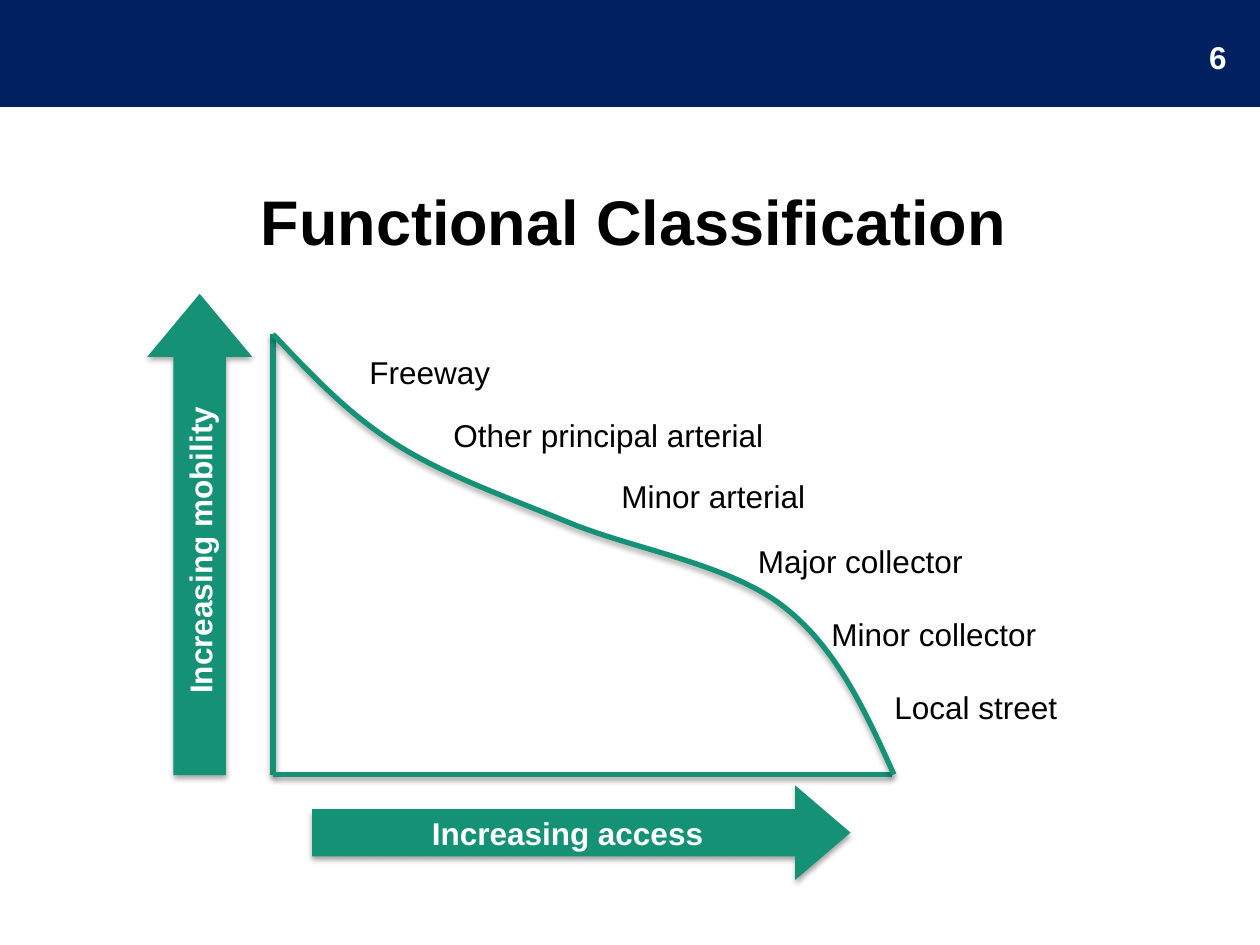
from dataclasses import dataclass

import lxml.etree
import pptx
import pptx.dml.color
import pptx.enum.shapes
import pptx.enum.text
import pptx.oxml
import pptx.oxml.ns
import pptx.util

Pt = pptx.util.Pt
RGB = pptx.dml.color.RGBColor.from_string
Shape = pptx.enum.shapes.MSO_SHAPE
Align = pptx.enum.text.PP_ALIGN
Anchor = pptx.enum.text.MSO_ANCHOR
qn = pptx.oxml.ns.qn


@dataclass(frozen=True)
class Theme:
    font: str = "Arial"
    navy: str = "002060"
    green: str = "159175"
    black: str = "000000"
    white: str = "FFFFFF"
    title_size: int = 36
    body_size: int = 18
    header_line: int = 2
    graph_line: int = 3


class SlideBuilder:
    def __init__(self, theme, slide):
        self.theme = theme
        self.slide = slide
        self.shapes = slide.shapes

    def start_group(self):
        self.shapes = self.slide.shapes.add_group_shape().shapes

    def end_group(self):
        self.shapes = self.slide.shapes

    def set_text(self, frame, text, color, size, bold=False, align=Align.LEFT):
        frame.word_wrap = True
        paragraph = frame.paragraphs[0]
        paragraph.text = text
        paragraph.alignment = align
        font = paragraph.font
        font.name = self.theme.font
        font.size = Pt(size)
        font.bold = bold
        font.color.rgb = RGB(color)

    def add_shadow(self, shape):
        properties = shape._element.spPr
        effects = properties.find(qn("a:effectLst"))
        if effects is None:
            effects = lxml.etree.SubElement(properties, qn("a:effectLst"))
        effects.append(pptx.oxml.parse_xml(
            f'<a:outerShdw {pptx.oxml.ns.nsdecls("a")} blurRad="{Pt(3.1)}" '
            f'dist="{Pt(1.8)}" dir="5400000" rotWithShape="0">'
            f'<a:srgbClr val="{self.theme.black}"><a:alpha val="35000"/></a:srgbClr>'
            '</a:outerShdw>'))

    def stroke(self, line):
        line.color.rgb = RGB(self.theme.green)
        line.width = Pt(self.theme.graph_line)

    def header(self, width, height):
        band = self.shapes.add_shape(Shape.RECTANGLE, 0, 0, Pt(width), Pt(height))
        band.shadow.inherit = False
        band.fill.solid()
        band.fill.fore_color.rgb = RGB(self.theme.navy)
        band.line.color.rgb = RGB(self.theme.navy)
        band.line.width = Pt(self.theme.header_line)

    def title(self, text, left, top, width, height):
        title = self.slide.shapes.title
        title.left, title.top, title.width, title.height = map(Pt, (left, top, width, height))
        title.text_frame.vertical_anchor = Anchor.MIDDLE
        self.set_text(title.text_frame, text, self.theme.black,
                      self.theme.title_size, True, Align.CENTER)

    def axis(self, start, end):
        axis = self.shapes.add_connector(
            pptx.enum.shapes.MSO_CONNECTOR.STRAIGHT, *map(Pt, start + end))
        self.stroke(axis.line)
        self.add_shadow(axis)

    def curve(self, start, controls):
        builder = self.shapes.build_freeform(Pt(start[0]), Pt(start[1]))
        builder.add_line_segments([(Pt(x), Pt(y)) for x, y in controls], close=False)
        curve = builder.convert_to_shape()
        outline = curve._element.find(".//" + qn("a:path"))
        segments = outline.findall(qn("a:lnTo"))
        for first in range(0, len(segments), 3):
            bezier = lxml.etree.SubElement(outline, qn("a:cubicBezTo"))
            for segment in segments[first:first + 3]:
                bezier.append(segment[0])
                outline.remove(segment)
        curve.shadow.inherit = False
        curve.fill.background()
        self.stroke(curve.line)
        self.add_shadow(curve)

    def arrow(self, text, left, top, width, height, head, rotation=0):
        arrow = self.shapes.add_shape(
            Shape.RIGHT_ARROW, *map(Pt, (left, top, width, height)))
        arrow.rotation = rotation
        arrow.adjustments[1] = head
        arrow.shadow.inherit = False
        arrow.fill.solid()
        arrow.fill.fore_color.rgb = RGB(self.theme.green)
        arrow.line.fill.background()
        self.add_shadow(arrow)
        arrow.text_frame.vertical_anchor = Anchor.MIDDLE
        self.set_text(arrow.text_frame, text, self.theme.white,
                      self.theme.body_size, True, Align.CENTER)

    def label(self, text, left, top, width, height=29):
        label = self.shapes.add_textbox(*map(Pt, (left, top, width, height)))
        label.text_frame.auto_size = pptx.enum.text.MSO_AUTO_SIZE.SHAPE_TO_FIT_TEXT
        self.set_text(label.text_frame, text, self.theme.black, self.theme.body_size)

    def page_number(self, text, left, top, width, height=29):
        number = self.shapes.add_textbox(*map(Pt, (left, top, width, height)))
        self.set_text(number.text_frame, text, self.theme.white,
                      self.theme.body_size, True, Align.RIGHT)


def main():
    deck = pptx.Presentation()
    deck.slide_width, deck.slide_height = Pt(720), Pt(540)
    page = SlideBuilder(Theme(), deck.slides.add_slide(deck.slide_layouts[5]))

    page.header(720, 60)
    page.title("Functional Classification", 2, 78, 720, 96)
    page.page_number("6", 540, 18, 168)

    page.start_group()
    graph_top, origin, access_end = (156, 191), (156, 442.6), (510, 442.6)
    page.axis(graph_top, origin)
    page.axis(origin, access_end)
    page.curve(graph_top, [
        (177, 213), (198, 236), (226.5, 254),
        (255, 272), (289.5, 284), (326, 299),
        (363, 314), (417, 322.5), (447.5, 346.5),
        (478, 370), (494.5, 406.5), (510.8, 442.6),
    ])
    page.arrow("Increasing mobility", -23.4, 275.4, 275, 60, 0.6, 270)
    page.arrow("Increasing access", 178.4, 448.8, 307.6, 54, 0.585)

    for text, left, top, width in [
        ("Freeway", 204, 198, 108),
        ("Other principal arterial", 252, 234, 193),
        ("Minor arterial", 348, 269, 120),
        ("Major collector", 426, 306, 150),
        ("Minor collector", 468, 348, 150),
        ("Local street", 504, 389.8, 150),
    ]:
        page.label(text, left, top, width)
    page.end_group()

    deck.save("out.pptx")


if __name__ == "__main__":
    main()
